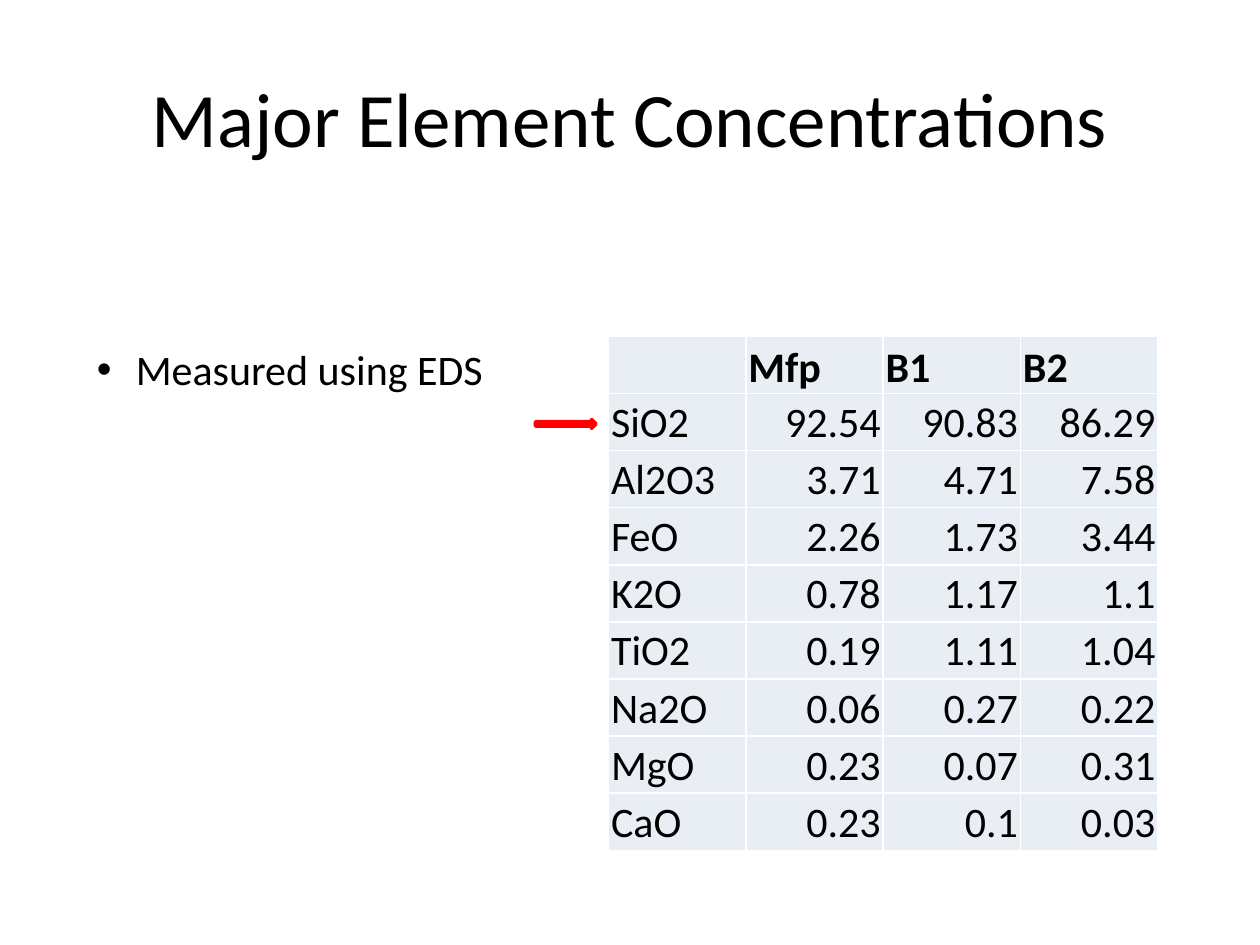
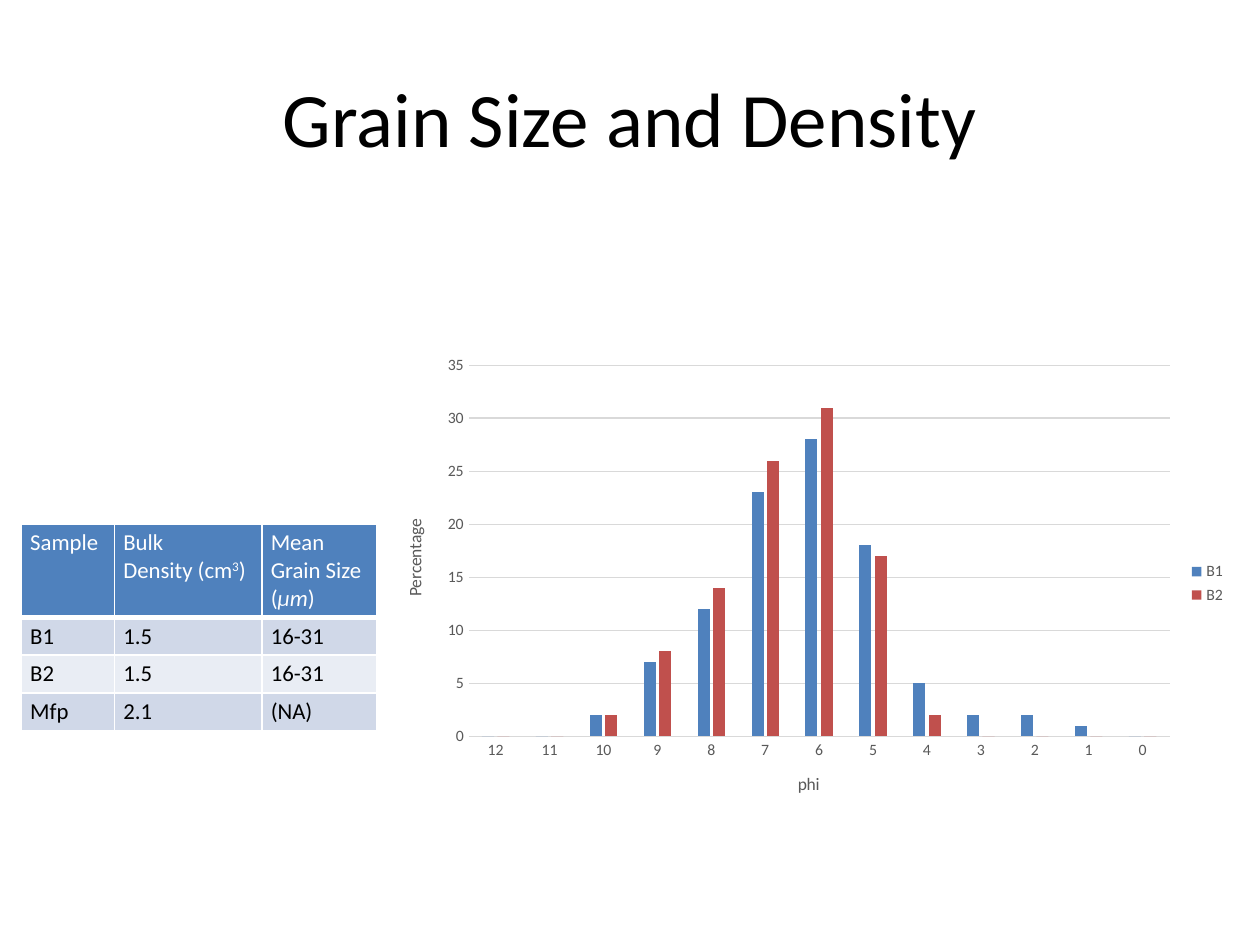
from dataclasses import dataclass

import pptx
import pptx.chart.data
import pptx.dml.color
import pptx.enum.chart
import pptx.enum.shapes
import pptx.enum.text
import pptx.oxml
import pptx.oxml.ns
import pptx.util
from pptx.util import Inches

FONT = "Calibri"
BLACK, WHITE, RED = "000000", "FFFFFF", "FF0000"
BLUE, BRICK = "4F81BD", "C0504D"
BAND_DARK, BAND_LIGHT = "D0D8E8", "E9EDF4"
CHART_TEXT, CHART_LINE = "595959", "D9D9D9"

ALIGN = pptx.enum.text.PP_ALIGN
ANCHOR = pptx.enum.text.MSO_ANCHOR


@dataclass(frozen=True)
class TextRun:
    text: str
    italic: bool = False
    superscript: bool = False


@dataclass(frozen=True)
class CellStyle:
    size: float
    fill: str
    margins: tuple[float, float, float, float]  # left, top, right, bottom
    color: str = BLACK
    bold: bool = False
    align: ALIGN = ALIGN.LEFT
    anchor: ANCHOR = ANCHOR.TOP
    bottom_line: float = 1


@dataclass(frozen=True)
class Series:
    name: str
    color: str
    values: tuple[int, ...]


def rgb(color: str) -> pptx.dml.color.RGBColor:
    return pptx.dml.color.RGBColor.from_string(color)


def style_font(font, size: float, color: str, bold: bool = False) -> None:
    font.name, font.size, font.bold = FONT, pptx.util.Pt(size), bold
    font.color.rgb = rgb(color)


def add_run(paragraph, part: TextRun, size: float, color: str, bold: bool = False) -> None:
    run = paragraph.add_run()
    run.text = part.text
    style_font(run.font, size, color, bold)
    run.font.italic = part.italic
    if part.superscript:
        run._r.get_or_add_rPr().set("baseline", "30000")


def add_titled_slide(presentation, title: str):
    slide = presentation.slides.add_slide(presentation.slide_layouts[5])
    shape = slide.shapes.title
    shape.left, shape.top = Inches(0.5), Inches(0.3)
    shape.width, shape.height = Inches(9), Inches(1.25)
    shape.text_frame.vertical_anchor = ANCHOR.MIDDLE
    paragraph = shape.text_frame.paragraphs[0]
    paragraph.alignment = ALIGN.CENTER
    add_run(paragraph, TextRun(title), 44, BLACK)
    return slide


# Tables
def add_plain_table(slide, rows: int, columns: int, left: float, top: float,
                    width: float, height: float):
    table = slide.shapes.add_table(rows, columns, Inches(left), Inches(top),
                                   Inches(width), Inches(height)).table
    table.first_row = table.horz_banding = False
    return table


def add_border(cell, side: str, width: float) -> None:
    cell._tc.get_or_add_tcPr().append(pptx.oxml.parse_xml(
        f'<a:ln{side} {pptx.oxml.ns.nsdecls("a")} w="{pptx.util.Pt(width)}">'
        f'<a:solidFill><a:srgbClr val="{WHITE}"/></a:solidFill></a:ln{side}>'))


def fill_cell(cell, lines: list[list[TextRun]], style: CellStyle) -> None:
    for side in "LRTB":
        add_border(cell, side, style.bottom_line if side == "B" else 1)
    cell.fill.solid()
    cell.fill.fore_color.rgb = rgb(style.fill)
    cell.vertical_anchor = style.anchor
    (cell.margin_left, cell.margin_top,
     cell.margin_right, cell.margin_bottom) = map(Inches, style.margins)
    for index, line in enumerate(lines):
        frame = cell.text_frame
        paragraph = frame.add_paragraph() if index else frame.paragraphs[0]
        paragraph.alignment = style.align
        for part in line:
            add_run(paragraph, part, style.size, style.color, style.bold)


# Slide 1: element concentrations
CONCENTRATIONS = [
    ("", "Mfp", "B1", "B2"),
    ("SiO2", "92.54", "90.83", "86.29"),
    ("Al2O3", "3.71", "4.71", "7.58"),
    ("FeO", "2.26", "1.73", "3.44"),
    ("K2O", "0.78", "1.17", "1.1"),
    ("TiO2", "0.19", "1.11", "1.04"),
    ("Na2O", "0.06", "0.27", "0.22"),
    ("MgO", "0.23", "0.07", "0.31"),
    ("CaO", "0.23", "0.1", "0.03"),
]


def add_concentration_table(slide) -> None:
    table = add_plain_table(slide, len(CONCENTRATIONS), 4, 4.83, 2.67, 4.36, 4.08)
    for row, values in enumerate(CONCENTRATIONS):
        for column, value in enumerate(values):
            style = CellStyle(
                24, BAND_LIGHT, (0.02, 0.02, 0.02, 0), bold=row == 0,
                align=ALIGN.RIGHT if row and column else ALIGN.LEFT,
                anchor=ANCHOR.MIDDLE if row else ANCHOR.BOTTOM)
            fill_cell(table.cell(row, column), [[TextRun(value)]] if value else [], style)


def add_method_bullet(slide) -> None:
    box = slide.shapes.add_textbox(Inches(0.67), Inches(2.68), Inches(3.3), Inches(0.5))
    box.text_frame.word_wrap = False
    box.text_frame.auto_size = pptx.enum.text.MSO_AUTO_SIZE.SHAPE_TO_FIT_TEXT
    paragraph = box.text_frame.paragraphs[0]
    properties = paragraph._p.get_or_add_pPr()
    properties.set("marL", str(Inches(0.31)))
    properties.set("indent", str(-Inches(0.31)))
    for tag in ('buFont typeface="Arial"', 'buChar char="•"'):
        properties.append(pptx.oxml.parse_xml(f'<a:{tag} {pptx.oxml.ns.nsdecls("a")}/>'))
    add_run(paragraph, TextRun("Measured using EDS"), 24, BLACK)


def add_silica_arrow(slide) -> None:
    arrow = slide.shapes.add_shape(pptx.enum.shapes.MSO_SHAPE.RIGHT_ARROW,
                                   Inches(4.25), Inches(3.33), Inches(0.48), Inches(0.07))
    arrow.shadow.inherit = False
    arrow.fill.solid()
    arrow.fill.fore_color.rgb = arrow.line.color.rgb = rgb(RED)
    arrow.line.width = pptx.util.Pt(2)


# Slide 2: grain size and density
PHI = [str(phi) for phi in range(12, -1, -1)]
GRAIN_SERIES = [
    Series("B1", BLUE, (0, 0, 2, 7, 12, 23, 28, 18, 5, 2, 2, 1, 0)),
    Series("B2", BRICK, (0, 0, 2, 8, 14, 26, 31, 17, 2, 0, 0, 0, 0)),
]
DENSITY_HEADER = [
    [[TextRun("Sample")]],
    [[TextRun("Bulk")],
     [TextRun("Density (cm"), TextRun("3", superscript=True), TextRun(")")]],
    [[TextRun("Mean")],
     [TextRun("Grain Size ("), TextRun("μm", italic=True), TextRun(")")]],
]
DENSITIES = [("B1", "1.5", "16-31"), ("B2", "1.5", "16-31"), ("Mfp", "2.1", "(NA)")]


def style_axis(axis, title: str) -> None:
    axis.has_title = True
    paragraph = axis.axis_title.text_frame.paragraphs[0]
    add_run(paragraph, TextRun(title), 10, CHART_TEXT)
    axis.major_tick_mark = axis.minor_tick_mark = pptx.enum.chart.XL_TICK_MARK.NONE
    style_font(axis.tick_labels.font, 9, CHART_TEXT)


def style_chart_line(line) -> None:
    line.color.rgb = rgb(CHART_LINE)
    line.width = pptx.util.Pt(0.75)


def add_grain_chart(slide) -> None:
    data = pptx.chart.data.CategoryChartData()
    data.categories = PHI
    for series in GRAIN_SERIES:
        data.add_series(series.name, series.values)
    chart = slide.shapes.add_chart(
        pptx.enum.chart.XL_CHART_TYPE.COLUMN_CLUSTERED,
        Inches(3), Inches(2.75), Inches(6.83), Inches(3.76), data).chart
    style_font(chart.font, 10, BLACK)
    chart.has_title = False

    plot = chart.plots[0]
    plot.gap_width, plot.overlap, plot.vary_by_categories = 219, -27, False
    for drawn, series in zip(plot.series, GRAIN_SERIES):
        drawn.format.fill.solid()
        drawn.format.fill.fore_color.rgb = rgb(series.color)

    style_axis(chart.category_axis, "phi")
    style_chart_line(chart.category_axis.format.line)
    style_axis(chart.value_axis, "Percentage")
    chart.value_axis.format.line.fill.background()
    chart.value_axis.has_major_gridlines = True
    style_chart_line(chart.value_axis.major_gridlines.format.line)
    chart.value_axis.minimum_scale, chart.value_axis.maximum_scale = 0, 35
    chart.value_axis.major_unit = 5

    chart.has_legend = True
    chart.legend.position = pptx.enum.chart.XL_LEGEND_POSITION.RIGHT
    chart.legend.include_in_layout = False
    style_font(chart.legend.font, 9, CHART_TEXT)


def add_density_table(slide) -> None:
    table = add_plain_table(slide, 4, 3, 0.17, 4.16, 2.82, 1.63)
    for column, width in zip(table.columns, (0.74, 1.17, 0.91)):
        column.width = Inches(width)
    for row, height in zip(table.rows, (0.74, 0.3, 0.3, 0.3)):
        row.height = Inches(height)

    margins = (0.07, 0.04, 0.07, 0.04)
    header = CellStyle(13, BLUE, margins, WHITE, bottom_line=3)
    for column, lines in enumerate(DENSITY_HEADER):
        fill_cell(table.cell(0, column), lines, header)
    for row, values in enumerate(DENSITIES, start=1):
        style = CellStyle(13, BAND_DARK if row % 2 else BAND_LIGHT, margins)
        for column, value in enumerate(values):
            fill_cell(table.cell(row, column), [[TextRun(value)]], style)


def main() -> None:
    presentation = pptx.Presentation()
    presentation.slide_width, presentation.slide_height = Inches(10), Inches(7.5)

    slide = add_titled_slide(presentation, "Major Element Concentrations")
    add_concentration_table(slide)
    add_method_bullet(slide)
    add_silica_arrow(slide)

    slide = add_titled_slide(presentation, "Grain Size and Density")
    add_grain_chart(slide)
    add_density_table(slide)

    presentation.save("out.pptx")


if __name__ == "__main__":
    main()
